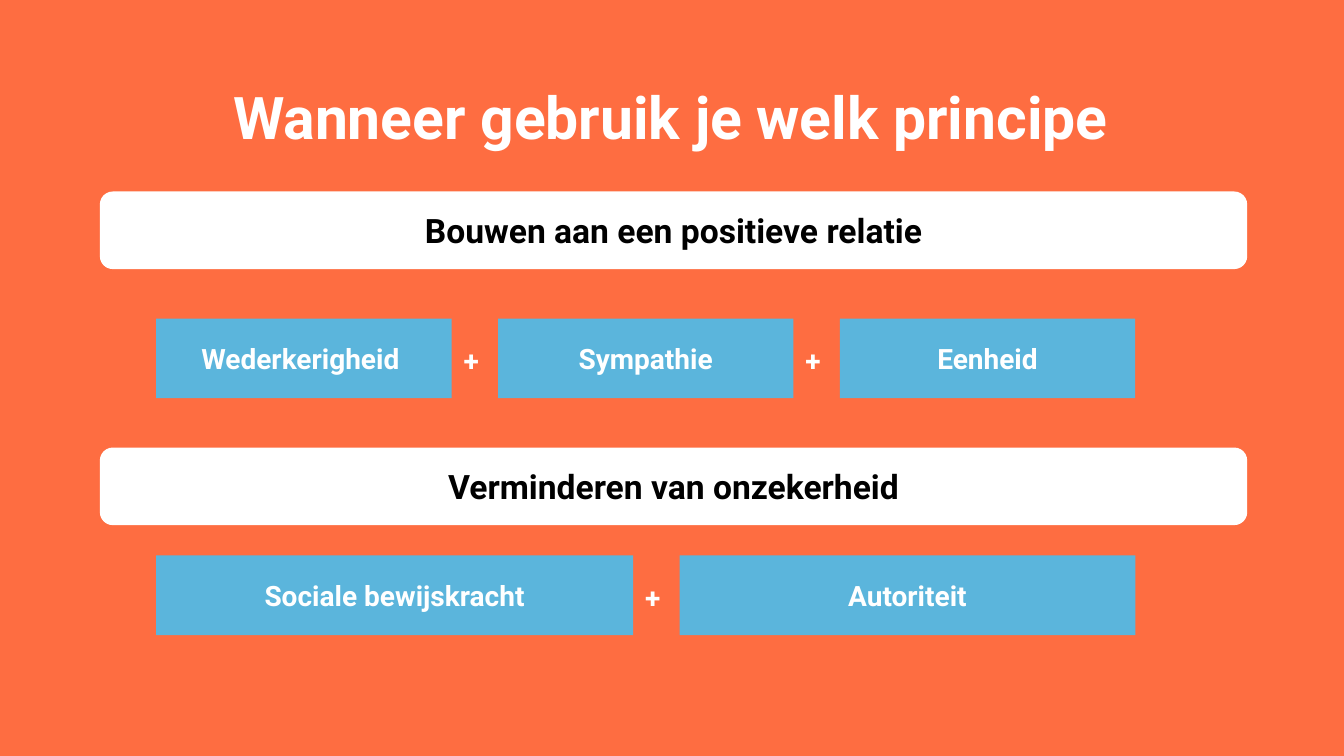
import pptx
import pptx.dml.color
import pptx.enum.shapes
import pptx.enum.text
import pptx.util

COLORS = {"background": "FE6D41", "goal": "FFFFFF", "principle": "5BB5DC",
          "dark": "000000", "light": "FFFFFF"}
SHAPES = pptx.enum.shapes.MSO_SHAPE
ALIGN = pptx.enum.text.PP_ALIGN
ANCHOR = pptx.enum.text.MSO_ANCHOR

deck = pptx.Presentation()
deck.slide_width = pptx.util.Inches(13.33)
deck.slide_height = pptx.util.Inches(7.5)
slide = deck.slides.add_slide(deck.slide_layouts[6])
slide.background.fill.solid()
slide.background.fill.fore_color.rgb = pptx.dml.color.RGBColor.from_string(COLORS["background"])


def write(label, wording, size, color, align=ALIGN.CENTER, anchor=ANCHOR.MIDDLE):
    frame = label.text_frame
    frame.word_wrap = True
    frame.vertical_anchor = anchor
    paragraph = frame.paragraphs[0]
    paragraph.text = wording
    paragraph.alignment = align
    paragraph.font.name = "Roboto"
    paragraph.font.size = pptx.util.Pt(size)
    paragraph.font.bold = True
    paragraph.font.color.rgb = pptx.dml.color.RGBColor.from_string(COLORS[color])


def add_block(outline, box, fill):
    """Add a flat, borderless shape; box is left, top, width, height in inches."""
    block = slide.shapes.add_shape(outline, *map(pptx.util.Inches, box))
    block.shadow.inherit = False
    block.fill.solid()
    block.fill.fore_color.rgb = pptx.dml.color.RGBColor.from_string(COLORS[fill])
    block.line.fill.background()
    return block


GOAL_LEFT, GOAL_WIDTH, GOAL_HEIGHT = 0.99, 11.38, 0.77
ROW_LEFT, ROW_HEIGHT, GAP = 1.55, 0.79, 0.46

title = slide.shapes.add_textbox(*map(pptx.util.Inches, (0.96, 0.53, GOAL_WIDTH, 1.25)))
write(title, "Wanneer gebruik je welk principe", 42, "light")

# Each goal: wording, top, top of its principles, and each principle with its width
goals = [
    ("Bouwen aan een positieve relatie", 1.9, 3.16,
     [("Wederkerigheid ", 2.93), ("Sympathie", 2.93), ("Eenheid", 2.93)]),
    ("Verminderen van onzekerheid", 4.44, 5.51,
     [("Sociale bewijskracht", 4.73), ("Autoriteit", 4.52)]),
]
for goal, goal_top, row_top, principles in goals:
    banner = add_block(SHAPES.ROUNDED_RECTANGLE,
                       (GOAL_LEFT, goal_top, GOAL_WIDTH, GOAL_HEIGHT), "goal")
    write(banner, goal, 24, "dark")

    left = ROW_LEFT
    for position, (principle, width) in enumerate(principles):
        if position > 0:
            plus = slide.shapes.add_textbox(
                *map(pptx.util.Inches, (left - GAP + 0.02, row_top + 0.2, 0.48, 0.44)))
            write(plus, "+", 20, "light", ALIGN.LEFT, ANCHOR.TOP)
        card = add_block(SHAPES.RECTANGLE, (left, row_top, width, ROW_HEIGHT), "principle")
        write(card, principle, 20, "light")
        left += width + GAP

deck.save("out.pptx")
